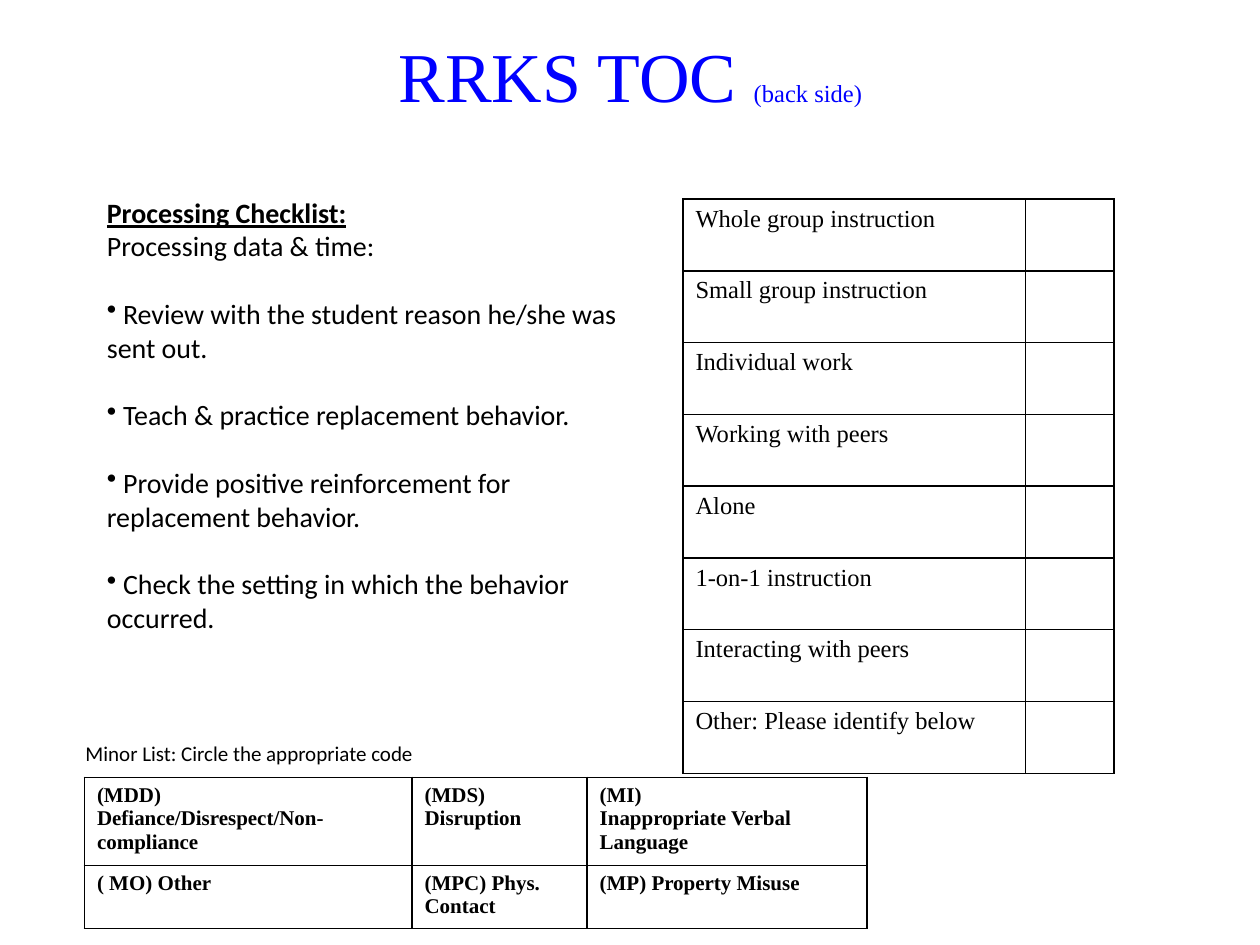
"""Build the RRKS TOC back side slide."""
from lxml import etree
from pptx import Presentation
from pptx.dml.color import RGBColor
from pptx.enum import text as t
from pptx.oxml import ns
from pptx.util import Inches, Pt

BLUE = RGBColor(0, 0, 255)
BLACK = RGBColor(0, 0, 0)
SERIF, SANS = "Times New Roman", "Calibri"

TITLE = ("RRKS TOC ", "(back side)")
HEAD = "Processing Checklist:"
INTRO = "Processing data & time:"
STEPS = [
    "Review with the student reason he/she was sent out.",
    "Teach & practice replacement behavior.",
    "Provide positive reinforcement for replacement behavior.",
    "Check the setting in which the behavior occurred.",
]
PLACES = [
    "Whole group instruction", "Small group instruction",
    "Individual work", "Working with peers", "Alone",
    "1-on-1 instruction", "Interacting with peers",
    "Other: Please identify below",
]
LABEL = "Minor List: Circle the appropriate code"
CODES = [
    ["(MDD)\nDefiance/Disrespect/Non-compliance", "(MDS) Disruption",
     "(MI)\nInappropriate Verbal Language"],
    ["( MO) Other", "(MPC) Phys. Contact", "(MP) Property Misuse"],
]


def write(para, words, size=16, face=SANS, color=BLACK, bold=False, line=False):
    run = para.add_run()
    run.text = words
    font = run.font
    font.size, font.name, font.bold, font.underline = Pt(size), face, bold, line
    font.color.rgb = color


def add_box(slide, left, top, width, height, wrap=True):
    area = map(Inches, (left, top, width, height))
    frame = slide.shapes.add_textbox(*area).text_frame
    frame.word_wrap = wrap
    return frame


def add_bullet(para):
    props = para._p.get_or_add_pPr()
    props.set("marL", "0")
    props.set("indent", "0")
    etree.SubElement(props, ns.qn("a:buChar")).set("char", "•")


def add_rule(cell):
    props = cell._tc.get_or_add_tcPr()
    for side in ("lnL", "lnR", "lnT", "lnB"):
        edge = etree.SubElement(props, ns.qn("a:" + side), w=str(Pt(1)))
        fill = etree.SubElement(edge, ns.qn("a:solidFill"))
        etree.SubElement(fill, ns.qn("a:srgbClr"), val=str(BLACK))


def add_grid(slide, left, top, cols, rows, cells, **style):
    area = map(Inches, (left, top, sum(cols), sum(rows)))
    grid = slide.shapes.add_table(len(rows), len(cols), *area).table
    grid.first_row = grid.horz_banding = False
    for col, width in zip(grid.columns, cols):
        col.width = Inches(width)
    for row, height, texts in zip(grid.rows, rows, cells):
        row.height = Inches(height)
        for cell, words in zip(row.cells, texts):
            add_rule(cell)
            cell.fill.background()
            frame = cell.text_frame
            for i, part in enumerate(words.split("\n") if words else []):
                para = frame.add_paragraph() if i else frame.paragraphs[0]
                write(para, part, face=SERIF, **style)


def main():
    deck = Presentation()
    deck.slide_width, deck.slide_height = Inches(10), Inches(7.5)
    slide = deck.slides.add_slide(deck.slide_layouts[6])

    frame = add_box(slide, 0.83, 0, 8.5, 1.25)
    frame.margin_top, frame.margin_right = Inches(0.26), Inches(0.25)
    para = frame.paragraphs[0]
    para.alignment = t.PP_ALIGN.CENTER
    for words, size in zip(TITLE, (40, 14)):
        write(para, words, size=size, face=SERIF, color=BLUE)

    frame = add_box(slide, 0.75, 1.5, 4.45, 4.38)
    write(frame.paragraphs[0], HEAD, bold=True, line=True)
    write(frame.add_paragraph(), INTRO)
    for step in STEPS:
        para = frame.add_paragraph()
        para.space_before = Pt(19.5)
        add_bullet(para)
        write(para, " " + step)

    add_grid(slide, 5.42, 1.58, [2.72, 0.7], [0.57] * len(PLACES),
             [(place, "") for place in PLACES], size=14)

    frame = add_box(slide, 0.58, 5.83, 3.02, 0.3, wrap=False)
    frame.vertical_anchor = t.MSO_ANCHOR.MIDDLE
    write(frame.paragraphs[0], LABEL, size=12)

    add_grid(slide, 0.67, 6.17, [2.6, 1.39, 2.22], [0.7, 0.5],
             CODES, size=12, bold=True)
    deck.save("out.pptx")


if __name__ == "__main__":
    main()
